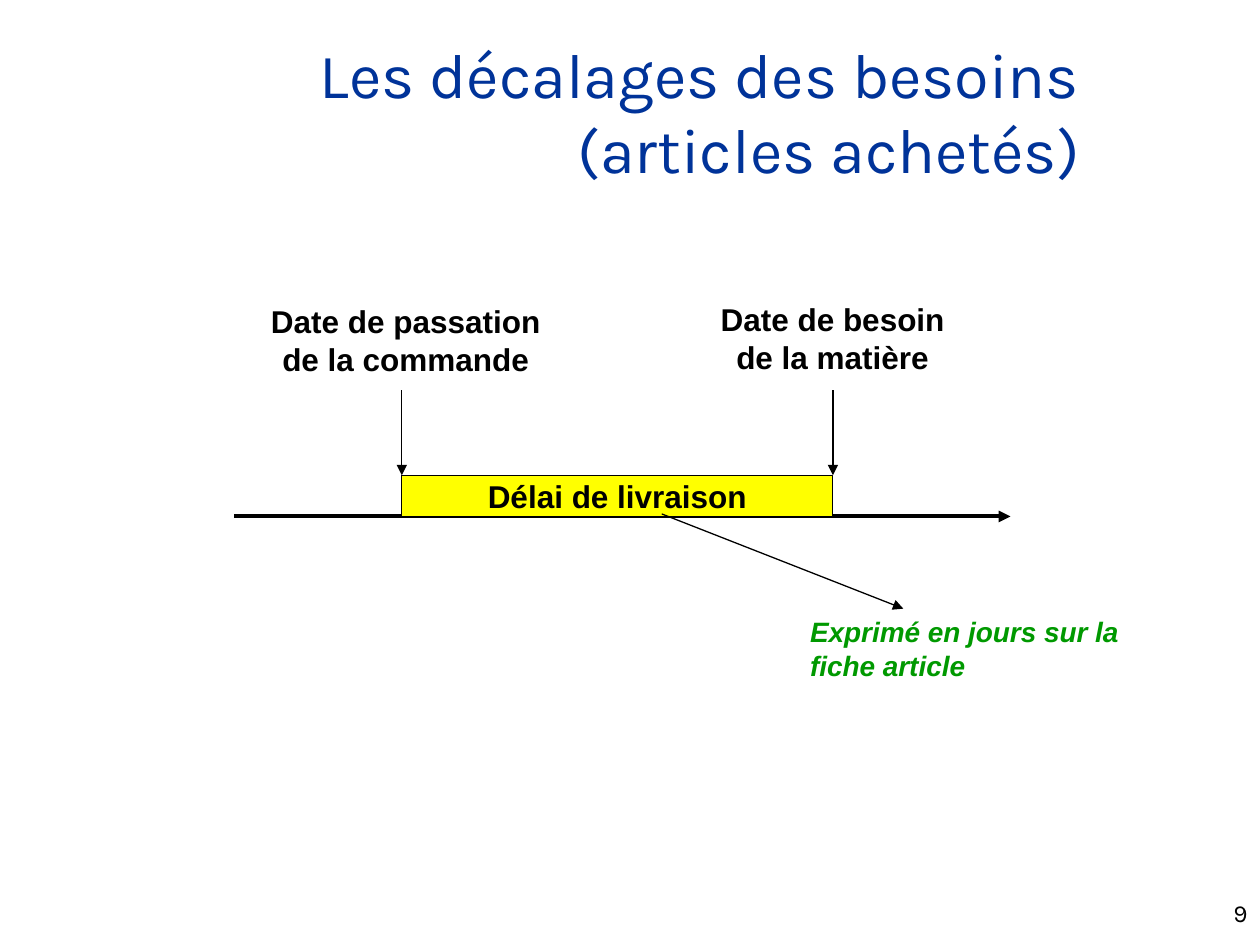
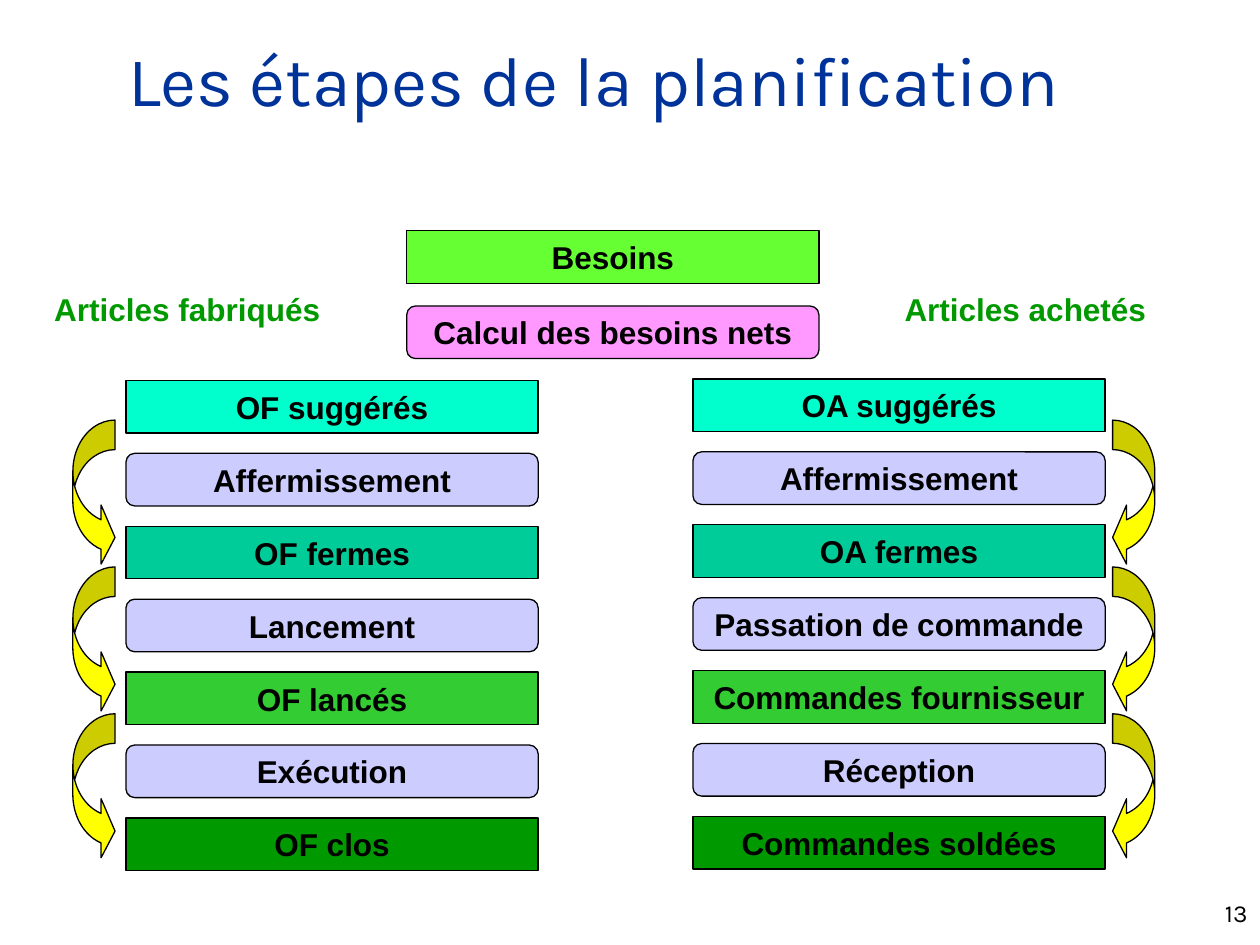
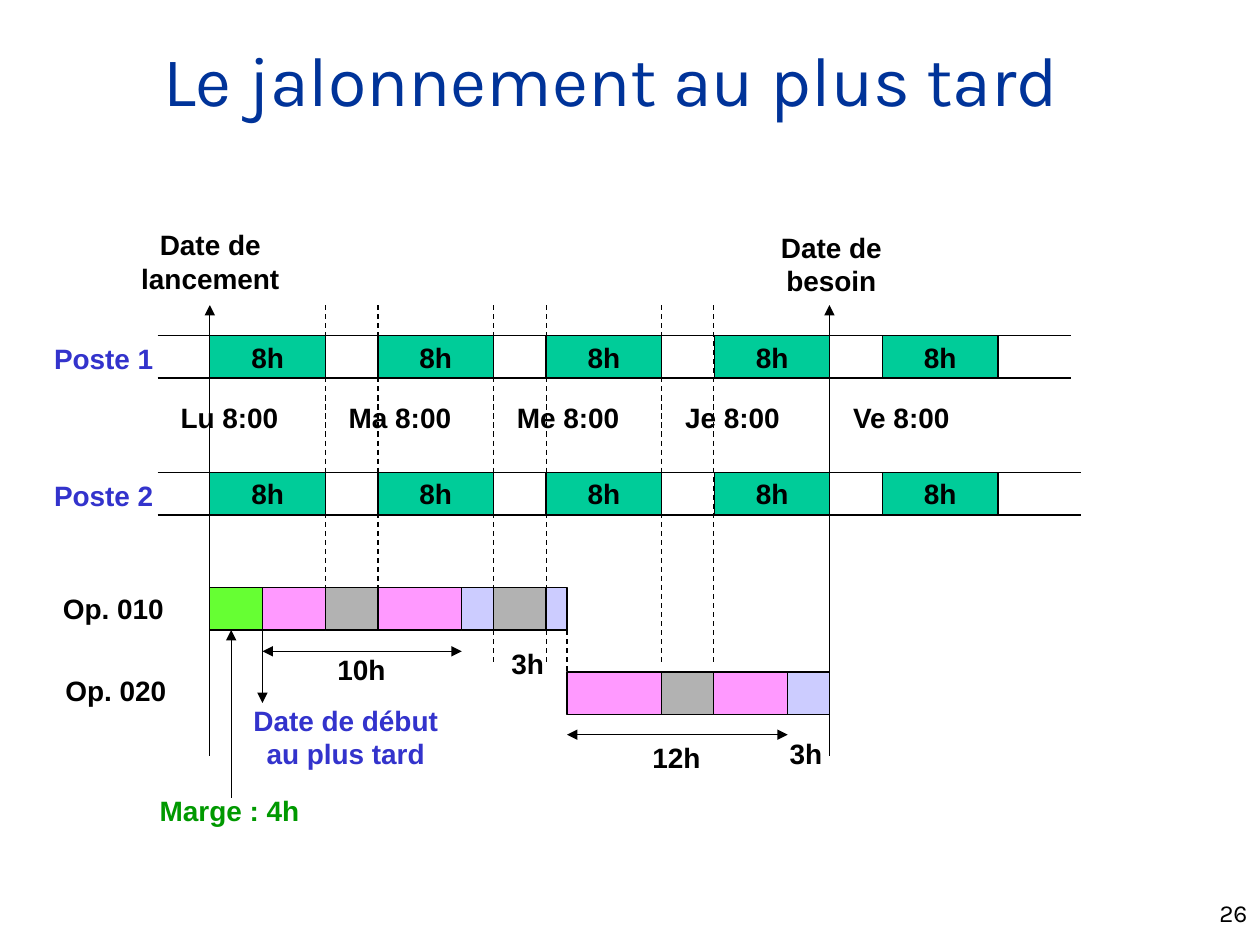
from itertools import pairwise

from lxml import etree
from pptx import Presentation
from pptx.dml.color import RGBColor
from pptx.enum.dml import MSO_LINE
from pptx.enum.shapes import MSO_CONNECTOR, MSO_SHAPE
from pptx.enum.text import MSO_ANCHOR, MSO_AUTO_SIZE, PP_ALIGN
from pptx.oxml.ns import qn
from pptx.util import Cm, Pt

LEFT, CENTER, RIGHT = PP_ALIGN.LEFT, PP_ALIGN.CENTER, PP_ALIGN.RIGHT
MIDDLE = MSO_ANCHOR.MIDDLE
FIT, FIXED = MSO_AUTO_SIZE.SHAPE_TO_FIT_TEXT, MSO_AUTO_SIZE.NONE
STRAIGHT, DASH = MSO_CONNECTOR.STRAIGHT, MSO_LINE.DASH
RECT, ROUNDED = MSO_SHAPE.RECTANGLE, MSO_SHAPE.ROUNDED_RECTANGLE
CURVED_RIGHT, CURVED_LEFT = MSO_SHAPE.CURVED_RIGHT_ARROW, MSO_SHAPE.CURVED_LEFT_ARROW

TITLE_FONT, BODY_FONT = "Karla", "Arial"
BLACK, NAVY, BLUE, GREEN = "000000", "003399", "3333CC", "009900"
YELLOW, LIME, PINK, LILAC, GREY = "FFFF00", "66FF33", "FF99FF", "CCCCFF", "B2B2B2"
AQUA, TEAL, LEAF = "00FFCC", "00CC99", "33CC33"


def color(value):
    """Turn a hex string into a colour."""
    return RGBColor.from_string(value)


class Deck:
    """Hold the shared style and the slide being built, with lengths in cm."""

    def __init__(self):
        """Open an empty 4:3 deck."""
        self.deck = Presentation()
        self.deck.slide_width, self.deck.slide_height = Cm(25.4), Cm(19.05)
        self.page = None

    def set_text(self, frame, text, size, ink=BLACK, align=LEFT, font=BODY_FONT, bold=True, italic=False):
        """Fill a text frame and format every run in it."""
        frame.text = text
        for para in frame.paragraphs:
            para.alignment = align
            for span in para.runs:
                span.font.name, span.font.size = font, Pt(size)
                span.font.bold, span.font.italic = bold, italic
                span.font.color.rgb = color(ink)

    def add_page(self, title, number, x=0, y=0, size=40):
        """Start a slide with its title and number."""
        self.page = self.deck.slides.add_slide(self.deck.slide_layouts[5])
        box = self.page.shapes.title
        box.left, box.top, box.width, box.height = Cm(x), Cm(y), Cm(21.59), Cm(3.18)
        frame = box.text_frame
        frame.auto_size, frame.vertical_anchor, frame.word_wrap = FIXED, MIDDLE, True
        self.set_text(frame, title, size, NAVY, RIGHT, TITLE_FONT, False)
        box = self.page.shapes.add_textbox(Cm(20.12), Cm(17.98), Cm(5.28), Cm(0.64))
        box.text_frame.word_wrap = True
        self.set_text(box.text_frame, str(number), 14, BLACK, RIGHT, TITLE_FONT, False)

    def label(self, text, x, y, width, height=0.94, size=16, wrap=False, **style):
        """Add a text box that grows with its text."""
        box = self.page.shapes.add_textbox(Cm(x), Cm(y), Cm(width), Cm(height))
        box.text_frame.word_wrap, box.text_frame.auto_size = wrap, FIT
        self.set_text(box.text_frame, text, size, **style)

    def block(self, x, y, width, height, fill, text="", size=18, kind=RECT, adjust=()):
        """Add an outlined shape, with centred text if there is any."""
        box = self.page.shapes.add_shape(kind, Cm(x), Cm(y), Cm(width), Cm(height))
        box.shadow.inherit = False
        box.fill.solid()
        box.fill.fore_color.rgb = color(fill)
        box.line.color.rgb, box.line.width = color(BLACK), Pt(0.75)
        for index, value in enumerate(adjust):
            box.adjustments[index] = value
        if text:
            box.text_frame.word_wrap, box.text_frame.vertical_anchor = False, MIDDLE
            self.set_text(box.text_frame, text, size, align=CENTER)

    def line(self, x1, y1, x2, y2, width=0.75, dash=None, ends=()):
        """Add a straight line with arrowheads at the named ends."""
        link = self.page.shapes.add_connector(STRAIGHT, Cm(x1), Cm(y1), Cm(x2), Cm(y2))
        link.line.color.rgb, link.line.width = color(BLACK), Pt(width)
        link.line.dash_style = dash
        for end in ends:
            etree.SubElement(link.get_or_add_ln(), qn(f"a:{end}End"), type="triangle")
        etree.SubElement(link.element.spPr, qn("a:effectLst"))

    def bar(self, y, edges, fills):
        """Add adjoining blocks between successive edges."""
        for (start, stop), fill in zip(pairwise(edges), fills):
            self.block(start, y, stop - start, 0.85, fill)


def build_offsets(deck):
    """Show the delivery lead time of bought articles."""
    deck.add_page("Les décalages des besoins\v(articles achetés)", 9, 0.43, 0.64, 36)
    order, need, top, axis = 8.1, 16.79, 9.58, 10.41
    deck.line(4.72, axis, 20.37, axis, 2.25, ends=["tail"])
    for x in (order, need):
        deck.line(x, 7.87, x, top, ends=["tail"])
    deck.label("Date de besoin\nde la matière", 14.27, 5.92, 5.03, 1.78, 18, align=CENTER)
    deck.label("Date de passation\nde la commande", 5.21, 5.97, 5.94, 1.78, 18, align=CENTER)
    deck.block(order, top, need - order, axis - top, YELLOW, "Délai de livraison")
    deck.line(13.34, 10.36, 18.21, 12.27, ends=["tail"])
    deck.label("Exprimé en jours sur la fiche article", 16.08, 12.27, 8.05, 1.63,
               wrap=True, ink=GREEN, italic=True)


def build_steps(deck):
    """Show the planning steps for made and bought articles."""
    deck.add_page("Les étapes de la planification", 13)
    width, height = 8.31, 1.06
    deck.block(8.2, 4.65, width, height, LIME, "Besoins")
    deck.block(8.2, 6.17, width, height, PINK, "Calcul des besoins nets", kind=ROUNDED)
    deck.label("Articles fabriqués", 0.84, 5.72, 5.87, 1.02, 18, ink=GREEN, align=CENTER)
    deck.label("Articles achetés", 17.98, 5.72, 5.38, 1.02, 18, ink=GREEN, align=CENTER)
    fills = [AQUA, LILAC, TEAL, LILAC, LEAF, LILAC, GREEN]
    columns = [
        (2.54, 7.67, 1.47, CURVED_RIGHT,
         ["OF suggérés", "Affermissement", "OF fermes", "Lancement",
          "OF lancés", "Exécution", "OF clos"]),
        (13.97, 7.64, 22.43, CURVED_LEFT,
         ["OA suggérés", "Affermissement", "OA fermes", "Passation de commande",
          "Commandes fournisseur", "Réception", "Commandes soldées"]),
    ]
    for x, top, arrow_x, arrow, steps in columns:
        for row, (step, fill) in enumerate(zip(steps, fills)):
            kind = ROUNDED if row % 2 else RECT
            deck.block(x, top + 1.47 * row, width, height, fill, step, kind=kind)
        for row in range(3):
            deck.block(arrow_x, 8.47 + 2.96 * row, 0.85, 2.96, YELLOW,
                       kind=arrow, adjust=(0.7, 1.4, 0.33))


def build_schedule(deck):
    """Show the latest-date schedule of two operations."""
    deck.add_page("Le jalonnement au plus tard", 26)
    launch, need, day, shift, height = 4.23, 16.72, 3.39, 2.33, 0.85
    for name, y, stop in (("Poste 1", 6.77, 21.59), ("Poste 2", 9.53, 21.8)):
        for index in range(5):
            deck.block(launch + day * index, y, shift, height, TEAL, "8h", 16)
        for edge in (y, y + height):
            deck.line(3.18, edge, stop, edge)
        deck.label(name, 0.84, y, 2.51, ink=BLUE)
    days = [("Lu", 2.49), ("Ma", 2.59), ("Me", 2.59), ("Je", 2.41), ("Ve", 2.49)]
    for index, (name, width) in enumerate(days):
        deck.label(f"{name} 8:00", day * (index + 1), 7.95, width)

    top, first, second = 6.15, 11.85, 13.55
    for x in (launch, need):
        deck.line(x, top, x, 15.24, ends=["head"])
    deck.label("Date de\nlancement", 2.59, 4.47, 3.3, 1.63, align=CENTER)
    deck.label("Date de\nbesoin", 15.49, 4.52, 2.54, 1.63, align=CENTER)
    for x, bottom in ((6.56, first), (7.62, first), (9.95, 13.34),
                      (11.01, 13.34), (13.34, 13.34), (14.39, 13.34)):
        deck.line(x, top, x, bottom, dash=DASH)

    start, finish = 5.29, 11.43
    below = first + height
    deck.line(finish, below, finish, second, dash=DASH)
    deck.bar(first, [launch, start, 6.56, 7.62, 9.31, 9.95, 11.01, finish],
             [LIME, PINK, GREY, PINK, LILAC, GREY, LILAC])
    deck.bar(second, [finish, 13.34, 14.39, 15.88, need], [PINK, GREY, PINK, LILAC])
    deck.line(start, 13.13, 9.31, 13.13, ends=["head", "tail"])
    deck.line(finish, 14.81, 15.88, 14.81, ends=["head", "tail"])
    deck.line(start, below, start, 14.17, ends=["tail"])
    deck.line(4.66, 16.08, 4.66, below, ends=["tail"])
    for text, x, y, width in (("Op. 010", 1.02, 11.81, 2.57), ("Op. 020", 1.07, 13.46, 2.57),
                              ("10h", 6.55, 13.03, 1.47), ("3h", 10.06, 12.9, 1.17),
                              ("12h", 12.9, 14.81, 1.47), ("3h", 15.67, 14.73, 1.17)):
        deck.label(text, x, y, width)
    deck.label("Date de début\nau plus tard", 4.85, 14.05, 4.24, 1.63, ink=BLUE, align=CENTER)
    deck.label("Marge : 4h", 2.97, 15.88, 3.33, ink=GREEN)


def main():
    """Build the three slides and save them."""
    deck = Deck()
    build_offsets(deck)
    build_steps(deck)
    build_schedule(deck)
    deck.deck.save("out.pptx")


if __name__ == "__main__":
    main()
